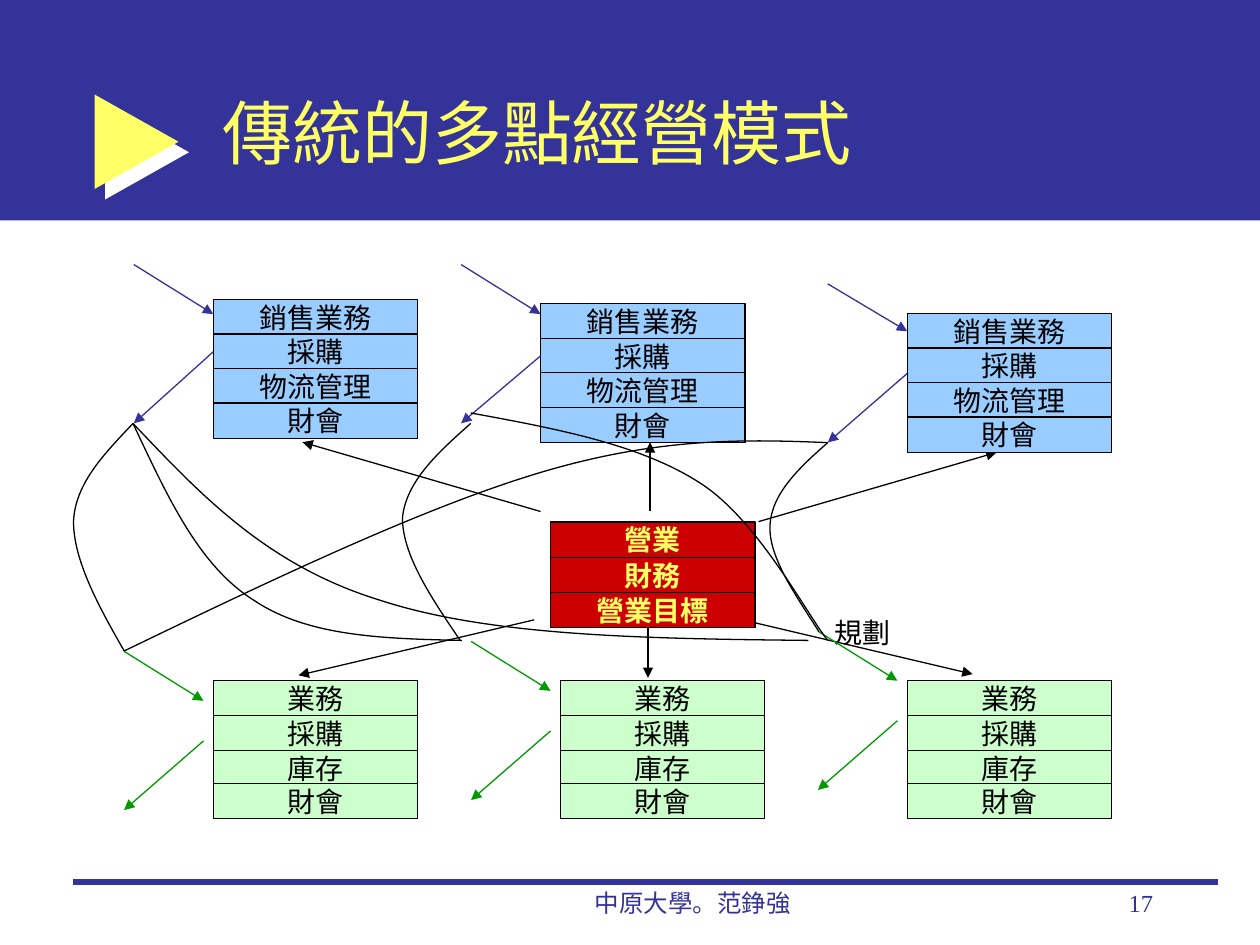
from typing import NamedTuple

from lxml import etree
from pptx import Presentation
from pptx.dml.color import RGBColor
from pptx.enum.shapes import MSO_CONNECTOR, MSO_SHAPE
from pptx.enum.text import MSO_ANCHOR, PP_ALIGN
from pptx.oxml.ns import qn
from pptx.util import Pt

STRAIGHT = MSO_CONNECTOR.STRAIGHT
RECTANGLE, RIGHT_ARROW = MSO_SHAPE.RECTANGLE, MSO_SHAPE.RIGHT_ARROW
TOP, MIDDLE = MSO_ANCHOR.TOP, MSO_ANCHOR.MIDDLE
LEFT, CENTER, RIGHT = PP_ALIGN.LEFT, PP_ALIGN.CENTER, PP_ALIGN.RIGHT
LEFT_SIDE = 1

NAVY, YELLOW, BLACK = "333399", "FFFF66", "000000"
BLUE, GREEN, RED, ARROW_GREEN = "99CCFF", "CCFFCC", "CC0000", "009900"
SERIF, SANS = "Times New Roman", "Arial"

ROW_WIDTH, ROW_HEIGHT = 116.9, 20.16
FLOW_RUN, INFLOW_DROP, OUTFLOW_START, OUTFLOW_END = 45.4, 28.3, 51.2, 90.7
SNAP = 1.5  # largest distance at which a flow joins the middle of a row's side


class Site(NamedTuple):
    left: float
    top: float
    flow_top: float


class SiteStyle(NamedTuple):
    departments: list[str]
    offsets: list[float]
    fill: str
    arrow: str
    gap: float


SALES_STYLE = SiteStyle(["銷售業務", "採購", "物流管理", "財會"],
                        [0, 19.7, 39.4, 59.1], BLUE, NAVY, 0)
PLANT_STYLE = SiteStyle(["業務", "採購", "庫存", "財會"],
                        [0, 20, 40, 58.8], GREEN, ARROW_GREEN, 5.6)
SALES_SITES = [Site(121.9, 171.2, 151.2), Site(308.9, 173.6, 151.2), Site(518.4, 179.2, 162.2)]
PLANT_SITES = [Site(121.9, 389, 372.2), Site(320.2, 389, 366.5), Site(518.4, 389, 360.7)]

HUB_LEFT, HUB_TOP = 314.6, 298.3
HUB_ARROWS = [
    ((305.3, 354.2), (170.6, 385.9)), ((421.2, 353.5), (555.8, 385.2)),
    ((370.3, 358.6), (370.3, 387.4)), ((308.9, 292.3), (172.8, 252.7)),
    ((433.4, 298.1), (569.5, 258.5)), ((371.5, 292.3), (371.5, 252.7)),
]

# Start point, then two control points and an end point per Bézier segment
SITE_LINKS = [
    [(269.3, 241.9), (250.6, 258.5), (231.8, 275), (230.4, 295.9),
     (229.7, 316.8), (246.2, 341.3), (262.8, 366.5)],
    [(76.3, 241.9), (95, 282.2), (113, 323.3), (144.7, 343.4),
     (175.7, 364.3), (219.6, 365), (263.5, 366.5)],
    [(76.3, 241.9), (114.5, 282.2), (151.9, 323.3), (216.7, 343.4),
     (280.8, 364.3), (371.5, 365), (462.2, 366.5)],
    [(473, 252.7), (424.8, 251.3), (375.8, 249.8), (308.9, 270),
     (241.9, 290.2), (156.2, 331.2), (70.6, 372.2)],
    [(76.3, 241.9), (59.8, 259.2), (43.2, 276.5), (42.5, 298.1),
     (41.8, 320.4), (56.2, 346.3), (70.6, 372.2)],
    [(473, 252.7), (457.2, 267.1), (441.4, 282.2), (439.9, 300.2),
     (439.2, 317.5), (453.6, 339.1), (468, 360.7)],
    [(269.3, 236.2), (317.5, 244.8), (365.8, 254.2), (399.6, 275.8),
     (433.4, 297.4), (460.8, 351.4), (473, 366.5)],
]


def color(value: str) -> RGBColor:
    return RGBColor.from_string(value)


def write(shape, text: str, size: float, ink: str, align=LEFT, anchor=TOP,
          font: str = SERIF, bold: bool = False, wrap: bool = True) -> None:
    frame = shape.text_frame
    for name, value in {"word_wrap": wrap, "vertical_anchor": anchor}.items():
        setattr(frame, name, value)
    paragraph = frame.paragraphs[0]
    paragraph.alignment = align
    run = paragraph.add_run()
    run.text = text
    for name, value in {"size": Pt(size), "name": font, "bold": bold}.items():
        setattr(run.font, name, value)
    run.font.color.rgb = color(ink)


def add_text(slide, left: float, top: float, width: float, height: float,
             text: str, size: float, ink: str, **style) -> None:
    box = slide.shapes.add_textbox(Pt(left), Pt(top), Pt(width), Pt(height))
    write(box, text, size, ink, **style)


def add_block(slide, kind, left: float, top: float, width: float, height: float, fill: str):
    block = slide.shapes.add_shape(kind, Pt(left), Pt(top), Pt(width), Pt(height))
    block.shadow.inherit = False
    block.fill.solid()
    block.fill.fore_color.rgb = color(fill)
    block.line.fill.background()
    return block


def add_row(slide, left: float, top: float, text: str, fill: str, ink: str, bold: bool = False):
    row = add_block(slide, RECTANGLE, left, top, ROW_WIDTH, ROW_HEIGHT, fill)
    row.line.color.rgb = color(BLACK)
    row.line.width = Pt(0.75)
    for side in ("margin_top", "margin_bottom"):
        setattr(row.text_frame, side, Pt(0))
    write(row, text, 16, ink, align=CENTER, anchor=MIDDLE, bold=bold, wrap=False)
    return row


def add_line(slide, start: tuple, end: tuple, ink: str, width: float = 0.75, arrow: bool = True):
    line = slide.shapes.add_connector(STRAIGHT, *(Pt(value) for value in (*start, *end)))
    line.line.color.rgb = color(ink)
    line.line.width = Pt(width)
    if arrow:
        etree.SubElement(line.line._get_or_add_ln(), qn("a:tailEnd"), type="triangle")
    etree.SubElement(line._element.spPr, qn("a:effectLst"))
    return line


def add_curve(slide, points: list[tuple[float, float]]) -> None:
    builder = slide.shapes.build_freeform(*points[0], scale=float(Pt(1)))
    builder.add_line_segments(points[1:], close=False)
    curve = builder.convert_to_shape()
    curve.shadow.inherit = False
    curve.fill.background()
    curve.line.color.rgb = color(BLACK)
    curve.line.width = Pt(0.75)
    # Turn each three straight segments into one Bézier segment
    outline = next(curve._element.iter(qn("a:path")))
    segments = outline.findall(qn("a:lnTo"))
    for first in range(0, len(segments), 3):
        bezier = etree.SubElement(outline, qn("a:cubicBezTo"))
        for segment in segments[first:first + 3]:
            bezier.append(segment[0])
            outline.remove(segment)


def add_site(slide, site: Site, style: SiteStyle) -> None:
    rows = [add_row(slide, site.left, site.top + offset, department, style.fill, BLACK)
            for department, offset in zip(style.departments, style.offsets)]
    near = site.left - style.gap
    far = near - FLOW_RUN
    inflow_y, outflow_y = site.flow_top + INFLOW_DROP, site.flow_top + OUTFLOW_START
    inflow = add_line(slide, (far, site.flow_top), (near, inflow_y), style.arrow)
    outflow = add_line(slide, (near, outflow_y), (far, site.flow_top + OUTFLOW_END), style.arrow)
    if style.gap:
        return
    for row, offset in zip(rows, style.offsets):
        middle = site.top + offset + ROW_HEIGHT / 2
        if abs(middle - inflow_y) < SNAP:
            inflow.end_connect(row, LEFT_SIDE)
        if abs(middle - outflow_y) < SNAP:
            outflow.begin_connect(row, LEFT_SIDE)


def main() -> None:
    deck = Presentation()
    deck.slide_width, deck.slide_height = Pt(720), Pt(540)
    slide = deck.slides.add_slide(deck.slide_layouts[6])

    # Title band with its pointer
    add_block(slide, RECTANGLE, 0, 0, 720, 126, NAVY)
    pointer = add_block(slide, RIGHT_ARROW, 54, 54, 48, 54, YELLOW)
    pointer.adjustments[0], pointer.adjustments[1] = 0.384, 1
    effects = pointer._element.spPr.find(qn("a:effectLst"))
    shadow = etree.SubElement(effects, qn("a:outerShdw"), dist=str(Pt(8.5)),
                              dir="2700000", algn="ctr", rotWithShape="0")
    etree.SubElement(shadow, qn("a:srgbClr"), val="FFFFFF")
    add_text(slide, 120, 30, 546, 90, "傳統的多點經營模式", 40, YELLOW, anchor=MIDDLE, font=SANS)

    # Footer
    add_line(slide, (42, 504), (696, 504), NAVY, width=3, arrow=False)
    add_text(slide, 282, 504, 228, 36, "中原大學。范錚強", 14, NAVY, align=CENTER)
    add_text(slide, 516, 504, 150, 36, "17", 14, NAVY, align=RIGHT)

    # Planning arrows and the head office
    for start, end in HUB_ARROWS:
        add_line(slide, start, end, BLACK)
    add_text(slide, 470, 348.5, 46.8, 26.6, "規劃", 16, BLACK, wrap=False)
    for index, goal in enumerate(["營業", "財務", "營業目標"]):
        add_row(slide, HUB_LEFT, HUB_TOP + index * ROW_HEIGHT, goal, RED, YELLOW, bold=True)

    # Sales sites above, plants below
    for sites, style in ((SALES_SITES, SALES_STYLE), (PLANT_SITES, PLANT_STYLE)):
        for site in sites:
            add_site(slide, site, style)

    # Links between sites
    for points in SITE_LINKS:
        add_curve(slide, points)

    deck.save("out.pptx")


if __name__ == "__main__":
    main()
